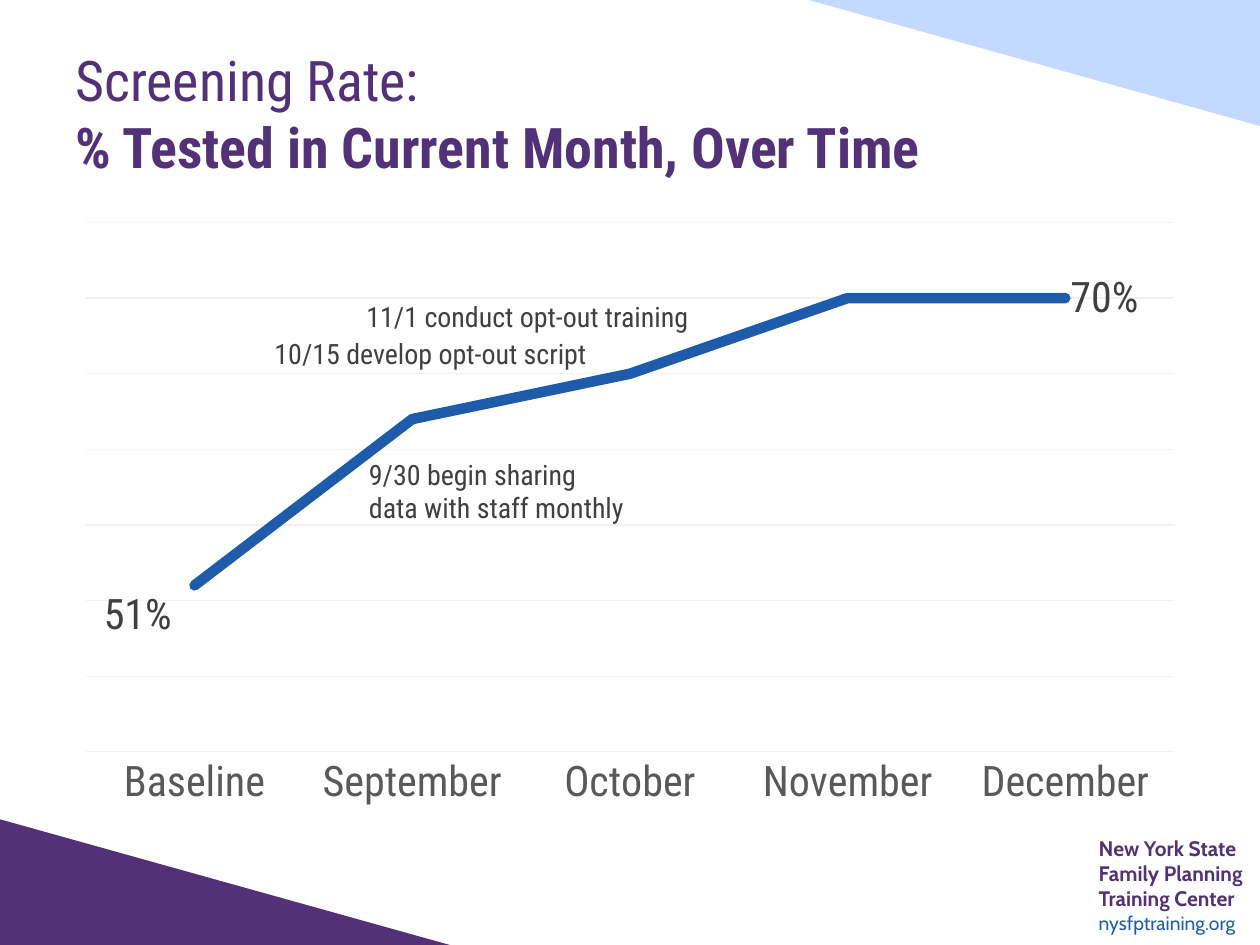
"""Build the screening rate slide with its annotated line chart."""
from lxml import etree
from pptx import Presentation
from pptx.chart.data import CategoryChartData
from pptx.dml.color import RGBColor
from pptx.enum.chart import XL_CHART_TYPE, XL_LABEL_POSITION, XL_TICK_LABEL_POSITION, XL_TICK_MARK
from pptx.enum.shapes import MSO_SHAPE
from pptx.enum.text import MSO_ANCHOR
from pptx.oxml.ns import qn
from pptx.util import Inches, Pt

LINE_CHART = XL_CHART_TYPE.LINE
BELOW, RIGHT = XL_LABEL_POSITION.BELOW, XL_LABEL_POSITION.RIGHT
NEXT_TO_AXIS = XL_TICK_LABEL_POSITION.NEXT_TO_AXIS
NO_TICK = XL_TICK_MARK.NONE
TRIANGLE = MSO_SHAPE.RIGHT_TRIANGLE
TOP, MIDDLE = MSO_ANCHOR.TOP, MSO_ANCHOR.MIDDLE

PURPLE = RGBColor(0x52, 0x31, 0x78)
PALE_BLUE = RGBColor(0xC3, 0xD9, 0xFF)
LINE_BLUE = RGBColor(0x1E, 0x5B, 0xAA)
LINK_BLUE = RGBColor(0x1D, 0x5C, 0xA9)
DARK_GRAY = RGBColor(0x40, 0x40, 0x40)
AXIS_GRAY = RGBColor(0x59, 0x59, 0x59)
GRID_GRAY = RGBColor(0xF2, 0xF2, 0xF2)
MAIN_FONT, FOOTER_FONT = "Roboto Condensed", "Cabin"

TITLE = [[("Screening Rate: ", False), ("% Tested in Current Month, Over Time", True)]]
RATES = {"Baseline": 0.51, "September": 0.62, "October": 0.65, "November": 0.7, "December": 0.7}
NOTES = [
    (2.08, 2.62, ["10/15 develop opt-out script"]),
    (2.81, 2.33, ["11/1 conduct opt-out training"]),
    (2.83, 3.58, ["9/30 begin sharing ", "data with staff monthly"]),
]
NOTE_WIDTH, NOTE_LINE = 2.85, 0.33
CENTER_NAME = ["New York State", "Family Planning", "Training Center"]
CENTER_SITE = "nysfptraining.org"
CORNERS = [(-0.01, 6.5, 0, PURPLE), (6.42, 0, 180, PALE_BLUE)]


def style(font, size, color, name=MAIN_FONT, bold=False):
    """Set the size, colour, typeface and weight of a font."""
    font.size, font.name, font.bold = Pt(size), name, bold
    font.color.rgb = color


def add_text(page, place, paragraphs, size, color, name=MAIN_FONT, anchor=TOP, inset=None):
    """Add a text box; each paragraph is a list of (line, bold) pairs."""
    box = page.shapes.add_textbox(*map(Inches, place))
    frame = box.text_frame
    frame.word_wrap, frame.vertical_anchor = True, anchor
    if inset is not None:
        frame.margin_left = frame.margin_right = Inches(inset)
        frame.margin_top = frame.margin_bottom = Inches(inset)
    for index, lines in enumerate(paragraphs):
        para = frame.add_paragraph() if index else frame.paragraphs[0]
        for number, (line, bold) in enumerate(lines):
            if number:
                para.add_line_break()
            span = para.add_run()
            span.text = line
            style(span.font, size, color, name, bold)
    return frame


def add_corner(page, left, top, rotation, color):
    """Add a corner triangle."""
    corner = page.shapes.add_shape(TRIANGLE, Inches(left), Inches(top), Inches(3.58), Inches(1))
    corner.rotation = rotation
    corner.shadow.inherit = False
    corner.fill.solid()
    corner.fill.fore_color.rgb = color
    corner.line.fill.background()


def manual_layout(layout, **values):
    """Fill a chart layout element with manual settings."""
    manual = etree.SubElement(layout, qn("c:manualLayout"))
    for key, value in values.items():
        etree.SubElement(manual, qn("c:" + key)).set("val", str(value))


def add_rate_chart(page):
    """Add the line chart with labels on its first and last points."""
    data = CategoryChartData(number_format="0%")
    data.categories = list(RATES)
    data.add_series("Series 1", list(RATES.values()))
    place = map(Inches, (0.5, 1.67, 9, 4.83))
    chart = page.shapes.add_chart(LINE_CHART, *place, data).chart
    chart.has_legend = chart.has_title = False
    chart.font.size, chart.font.name = Pt(24), MAIN_FONT

    months, rates = chart.category_axis, chart.value_axis
    months.major_tick_mark = months.minor_tick_mark = NO_TICK
    months.tick_label_position = NEXT_TO_AXIS
    months.format.line.fill.background()
    style(months.tick_labels.font, 24, AXIS_GRAY)
    rates.minimum_scale, rates.maximum_scale, rates.major_unit = 0.4, 0.75, 0.05
    rates.visible = False
    rates.has_major_gridlines = True
    grid = rates.major_gridlines.format.line
    grid.color.rgb, grid.width = GRID_GRAY, Pt(0.75)

    plot = chart.plots[0]
    plot.vary_by_categories = False
    series = plot.series[0]
    series.smooth = False
    series.format.line.color.rgb, series.format.line.width = LINE_BLUE, Pt(6)
    root = chart._chartSpace
    root.xpath("//c:ser/c:spPr/a:ln")[0].set("cap", "rnd")

    for index, position in ((0, BELOW), (len(RATES) - 1, RIGHT)):
        label = series.points[index].data_label
        style(label.font, 24, DARK_GRAY)
        label.position = position
    for leader in root.xpath("//c:showLeaderLines"):
        leader.set("val", "0")
    first_index = root.xpath("//c:dLbl/c:idx[@val='0']")[0]
    label_layout = etree.Element(qn("c:layout"))
    first_index.addnext(label_layout)
    manual_layout(label_layout, x=-0.05, y=0)

    area = root.xpath("//c:plotArea")[0]
    for old in area.findall(qn("c:layout")):
        area.remove(old)
    area_layout = etree.Element(qn("c:layout"))
    area.insert(0, area_layout)
    manual_layout(area_layout, layoutTarget="inner", xMode="edge", yMode="edge",
                  x=0.02, y=0.02, w=0.96, h=0.87)


def main():
    """Build and save the deck."""
    deck = Presentation()
    deck.slide_width, deck.slide_height = Inches(10), Inches(7.5)
    page = deck.slides.add_slide(deck.slide_layouts[6])
    for corner in CORNERS:
        add_corner(page, *corner)
    footer = add_text(page, (8.72, 6.63, 1.51, 0.81),
                      [[(line, True)] for line in CENTER_NAME], 12, PURPLE, FOOTER_FONT, inset=0)
    site = footer.add_paragraph().add_run()
    site.text = CENTER_SITE
    style(site.font, 11, LINK_BLUE, FOOTER_FONT)
    add_rate_chart(page)
    add_text(page, (0.5, 0.3, 9, 1.19), TITLE, 32, PURPLE, anchor=MIDDLE)
    for left, top, lines in NOTES:
        add_text(page, (left, top, NOTE_WIDTH, NOTE_LINE * len(lines)),
                 [[(line, False) for line in lines]], 16, DARK_GRAY)
    deck.save("out.pptx")


if __name__ == "__main__":
    main()
